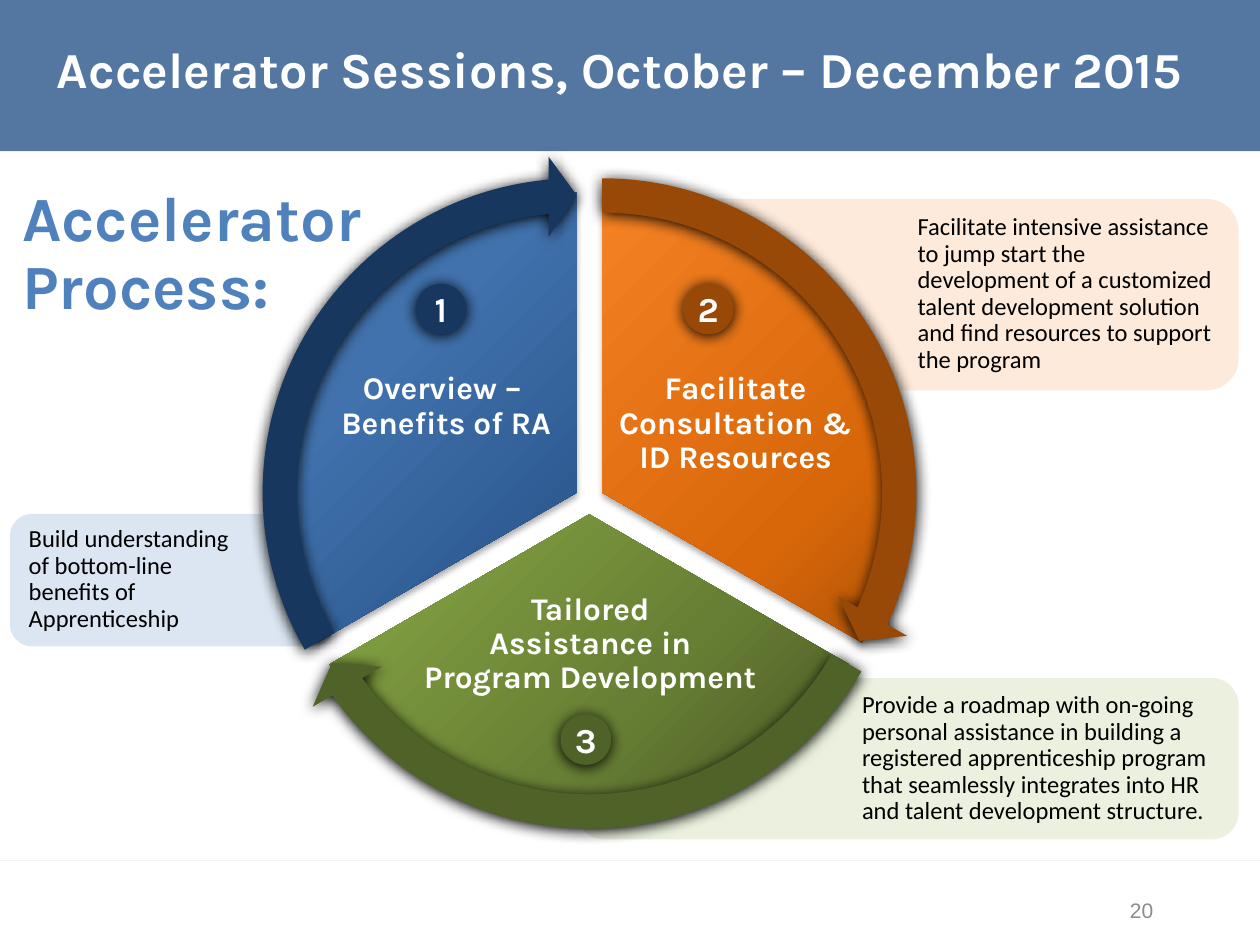
from dataclasses import dataclass

from lxml import etree
from pptx import Presentation
from pptx.dml.color import RGBColor
from pptx.enum.shapes import MSO_CONNECTOR, MSO_SHAPE
from pptx.enum.text import MSO_ANCHOR, PP_ALIGN
from pptx.oxml.ns import qn
from pptx.util import Cm, Pt

RECTANGLE = MSO_SHAPE.RECTANGLE
ROUNDED = MSO_SHAPE.ROUNDED_RECTANGLE
OVAL = MSO_SHAPE.OVAL
PIE = MSO_SHAPE.PIE
CIRCULAR_ARROW = MSO_SHAPE.CIRCULAR_ARROW
STRAIGHT = MSO_CONNECTOR.STRAIGHT
TOP, MIDDLE = MSO_ANCHOR.TOP, MSO_ANCHOR.MIDDLE
LEFT, CENTER, RIGHT = PP_ALIGN.LEFT, PP_ALIGN.CENTER, PP_ALIGN.RIGHT

PIE_SIZE, ARROW_SIZE, BADGE_SIZE = 12.09, 13.59, 1.02
DEGREE = 0.6
STOPS = (0, 23, 69, 97)


@dataclass
class Box:
    left: float
    top: float
    width: float
    height: float

    def lengths(self) -> tuple:
        return Cm(self.left), Cm(self.top), Cm(self.width), Cm(self.height)


@dataclass
class Callout:
    box: Box
    color: str
    left_inset: float
    right_inset: float
    text: str


@dataclass
class Segment:
    center: tuple
    start: int
    arrow_angles: tuple
    gradient: tuple
    color: str
    label_box: Box
    label: str
    badge: tuple


CALLOUTS = [
    Callout(Box(0.2, 10.36, 6.55, 2.67), "DCE6F2", 0.25, 1.78,
            "Build understanding of bottom-line benefits of Apprenticeship"),
    Callout(Box(12.47, 4.01, 12.5, 3.86), "FDEADA", 5.84, 0.25,
            "Facilitate intensive assistance to jump start the development of a customized "
            "talent development solution and find resources to support the program"),
    Callout(Box(11.63, 13.67, 13.34, 3.25), "EBF1DE", 5.59, 0.25,
            "Provide a roadmap with on-going personal assistance in building a registered "
            "apprenticeship program that seamlessly integrates into HR and talent "
            "development structure."),
]
SEGMENTS = [
    Segment((11.63, 9.93), 150, (158.73, 90), ("4172AD", "4172AD", "1F497D", "17375E"),
            "17375E", Box(5.72, 7.39, 6.55, 1.65), "Overview – \vBenefits of RA", (8.38, 5.72)),
    Segment((12.14, 9.93), 270, (14.72, 161.99), ("F68325", "F68325", "D86709", "984807"),
            "984807", Box(12.19, 7.39, 5.28, 2.34),
            "Facilitate Consultation & ID Resources", (13.77, 5.72)),
    Segment((11.88, 10.37), 30, (86.72, 18), ("8DAE47", "8DAE47", "677F34", "465623"),
            "4F6228", Box(8.13, 11.84, 7.54, 2.34),
            "Tailored\vAssistance in\vProgram Development", (11.3, 14.4)),
]


def rgb(color: str) -> RGBColor:
    return RGBColor.from_string(color)


def add_color(parent, color: str, alpha: int = 100) -> None:
    element = etree.SubElement(parent, qn("a:srgbClr"), val=color)
    if alpha < 100:
        etree.SubElement(element, qn("a:alpha"), val=str(alpha * 1000))


def shadow_effect(alpha: int, blur: float, distance: float):
    effects = etree.Element(qn("a:effectLst"))
    shadow = etree.SubElement(effects, qn("a:outerShdw"), blurRad=str(Pt(blur)),
                              dist=str(Pt(distance)), dir="5400000", rotWithShape="0")
    add_color(shadow, "000000", alpha)
    return effects


def cast_shadow(shape, alpha: int, blur: float, distance: float) -> None:
    properties = shape._element.spPr
    properties.replace(properties.find(qn("a:effectLst")), shadow_effect(alpha, blur, distance))


def add_shape(slide, kind, box: Box, color: str):
    shape = slide.shapes.add_shape(kind, *box.lengths())
    shape.shadow.inherit = False
    shape.fill.solid()
    shape.fill.fore_color.rgb = rgb(color)
    shape.line.fill.background()
    return shape


def add_text_box(slide, box: Box):
    return slide.shapes.add_textbox(*box.lengths())


def write(shape, text: str, font: str, size: float, color: str, bold: bool = False,
          align=LEFT, anchor=TOP, spacing: float = 1.0) -> None:
    frame = shape.text_frame
    frame.word_wrap = True
    frame.vertical_anchor = anchor
    frame.text = text
    for paragraph in frame.paragraphs:
        paragraph.alignment = align
        paragraph.line_spacing = spacing
        for run in paragraph.runs:
            run.font.name = font
            run.font.size = Pt(size)
            run.font.bold = bold
            run.font.color.rgb = rgb(color)


def set_insets(shape, left: float, top: float, right: float, bottom: float) -> None:
    frame = shape.text_frame
    frame.margin_left, frame.margin_top = Cm(left), Cm(top)
    frame.margin_right, frame.margin_bottom = Cm(right), Cm(bottom)


def fill_gradient(shape, colors: tuple) -> None:
    properties = shape._element.spPr
    gradient = etree.Element(qn("a:gradFill"), rotWithShape="1")
    stops = etree.SubElement(gradient, qn("a:gsLst"))
    for position, color in zip(STOPS, colors):
        add_color(etree.SubElement(stops, qn("a:gs"), pos=str(position * 1000)), color)
    circle = etree.SubElement(gradient, qn("a:path"), path="circle")
    etree.SubElement(circle, qn("a:fillToRect"), r="100000", b="100000")
    properties.replace(properties.find(qn("a:solidFill")), gradient)


def square_around(center: tuple, size: float) -> Box:
    return Box(center[0] - size / 2, center[1] - size / 2, size, size)


def set_adjustments(shape, values: tuple) -> None:
    for index, value in enumerate(values):
        shape.adjustments[index] = value


def add_callout(slide, callout: Callout) -> None:
    shape = add_shape(slide, ROUNDED, callout.box, callout.color)
    set_insets(shape, callout.left_inset, 0.13, callout.right_inset, 0.13)
    write(shape, callout.text, "Calibri", 14, "000000", spacing=0.9)


def add_segment(slide, segment: Segment) -> None:
    wedge = add_shape(slide, PIE, square_around(segment.center, PIE_SIZE), segment.color)
    end = (segment.start + 120) % 360
    set_adjustments(wedge, (segment.start * DEGREE, end * DEGREE))
    fill_gradient(wedge, segment.gradient)
    cast_shadow(wedge, 32, 3.5, 2.2)
    arrow = add_shape(slide, CIRCULAR_ARROW, square_around(segment.center, ARROW_SIZE),
                      segment.color)
    set_adjustments(arrow, (0.05085, 3.27528, *segment.arrow_angles, 0.05932))
    cast_shadow(arrow, 100, 8.5, 1)
    label = add_text_box(slide, segment.label_box)
    write(label, segment.label, "Karla", 18, "FFFFFF", True, CENTER, spacing=0.9)
    for run in label.text_frame.paragraphs[0].runs:
        run.font.fill._xPr.find(qn("a:solidFill")).addnext(shadow_effect(100, 3, 2))


def add_badge(slide, number: int, segment: Segment) -> None:
    badge = add_shape(slide, OVAL, Box(*segment.badge, BADGE_SIZE, BADGE_SIZE), segment.color)
    cast_shadow(badge, 100, 8.5, 1)
    set_insets(badge, 0, 0, 0, 0)
    write(badge, str(number), "Karla", 20, "FFFFFF", True, CENTER, MIDDLE)


def add_banner(slide) -> None:
    banner = add_shape(slide, RECTANGLE, Box(0, 0, 25.4, 3.05), "376092")
    color = banner._element.spPr.find(qn("a:solidFill"))[0]
    etree.SubElement(color, qn("a:alpha"), val="85000")
    rule = slide.shapes.add_connector(STRAIGHT, Cm(0), Cm(17.35), Cm(25.4), Cm(17.35))
    rule.line.color.rgb = rgb("F2F2F2")
    rule.line.width = Pt(0.75)
    etree.SubElement(rule._element.spPr, qn("a:effectLst"))


def add_title(slide) -> None:
    title = slide.shapes.title
    title.left, title.top, title.width, title.height = Box(0.43, 0.2, 24.13, 2.34).lengths()
    write(title, "Accelerator Sessions, October – December 2015", "Karla", 28.8, "FFFFFF",
          True, CENTER, MIDDLE)
    slide.shapes._spTree.append(title._element)


def main() -> None:
    presentation = Presentation()
    presentation.slide_width, presentation.slide_height = Cm(25.4), Cm(19.05)
    slide = presentation.slides.add_slide(presentation.slide_layouts[5])
    add_banner(slide)
    for callout in CALLOUTS:
        add_callout(slide, callout)
    page_number = add_text_box(slide, Box(17.58, 17.83, 5.92, 1.02))
    write(page_number, "20", "Arial", 12, "8C8C8C", align=RIGHT, anchor=MIDDLE)
    add_title(slide)
    for segment in SEGMENTS:
        add_segment(slide, segment)
    heading = add_text_box(slide, Box(0.2, 3.63, 10.36, 3.02))
    write(heading, "Accelerator\nProcess:", "Karla", 36, "4F81BD", True, anchor=MIDDLE,
          spacing=0.9)
    for number, segment in enumerate(SEGMENTS, 1):
        add_badge(slide, number, segment)
    presentation.save("out.pptx")


if __name__ == "__main__":
    main()
